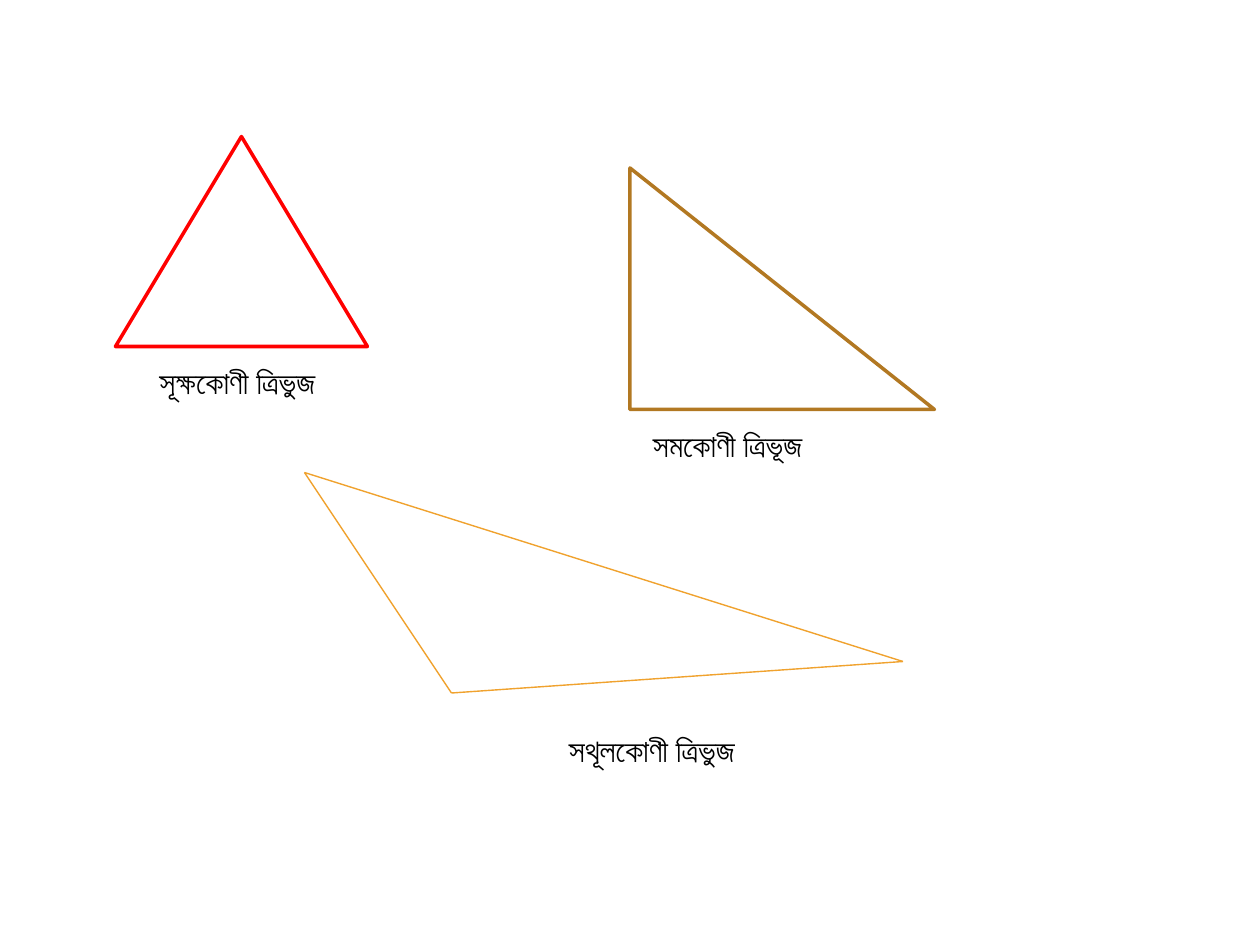
"""Build a slide that shows acute, right and obtuse triangles with Bengali labels."""
from dataclasses import dataclass

from lxml import etree
from pptx import Presentation
from pptx import util as u
from pptx.dml.color import RGBColor
from pptx.enum import shapes, text
from pptx.oxml.ns import qn


@dataclass(frozen=True)
class Theme:
    font: str = "Calibri"
    label_size: float = 18
    ink: str = "000000"
    paper: str = "FFFFFF"
    acute: str = "FF0000"
    right: str = "B27822"
    obtuse: str = "F0A22E"
    outline: float = 2
    thin: float = 0.79


THEME = Theme()
SLIDE_SIZE = (720, 540)
OBTUSE_CORNER, OBTUSE_RIGHT, OBTUSE_TOP = (258, 396), (516, 378), (174, 270)
LABELS = [
    ("সমকোণী ত্রিভূজ", (366, 240, 168, 29)),
    ("সূক্ষকোণী ত্রিভুজ", (84, 204, 174, 29)),
    ("সথূলকোণী ত্রিভুজ", (318, 414, 162, 29)),
]
TRIANGLES = [
    (shapes.MSO_SHAPE.ISOSCELES_TRIANGLE, (66, 78, 144, 120), THEME.acute),
    (shapes.MSO_SHAPE.RIGHT_TRIANGLE, (360, 96, 174, 138), THEME.right),
]


def points(values):
    return [u.Pt(value) for value in values]


def style_line(line, color, width):
    line.color.rgb = RGBColor.from_string(color)
    line.width = u.Pt(width)


def add_side(container, start, end):
    side = container.add_connector(shapes.MSO_CONNECTOR.STRAIGHT, *points(start + end))
    style_line(side.line, THEME.obtuse, THEME.thin)
    etree.SubElement(side._element.spPr, qn("a:effectLst"))


def add_label(page, words, frame):
    box = page.shapes.add_textbox(*points(frame)).text_frame
    box.word_wrap = True
    box.auto_size = text.MSO_AUTO_SIZE.SHAPE_TO_FIT_TEXT
    para = box.paragraphs[0]
    span = para.add_run()
    span.text = words
    span.font.name = THEME.font
    span.font.size = u.Pt(THEME.label_size)
    span.font.color.rgb = RGBColor.from_string(THEME.ink)


def add_triangle(page, kind, frame, color):
    triangle = page.shapes.add_shape(kind, *points(frame))
    triangle.shadow.inherit = False
    triangle.fill.solid()
    triangle.fill.fore_color.rgb = RGBColor.from_string(THEME.paper)
    style_line(triangle.line, color, THEME.outline)


def main():
    deck = Presentation()
    deck.slide_width, deck.slide_height = points(SLIDE_SIZE)
    page = deck.slides.add_slide(deck.slide_layouts[6])
    obtuse_arms = page.shapes.add_group_shape()
    for end in (OBTUSE_RIGHT, OBTUSE_TOP):
        add_side(obtuse_arms.shapes, OBTUSE_CORNER, end)
    add_side(page.shapes, OBTUSE_TOP, OBTUSE_RIGHT)
    for label in LABELS:
        add_label(page, *label)
    for triangle in TRIANGLES:
        add_triangle(page, *triangle)
    deck.save("out.pptx")


if __name__ == "__main__":
    main()
